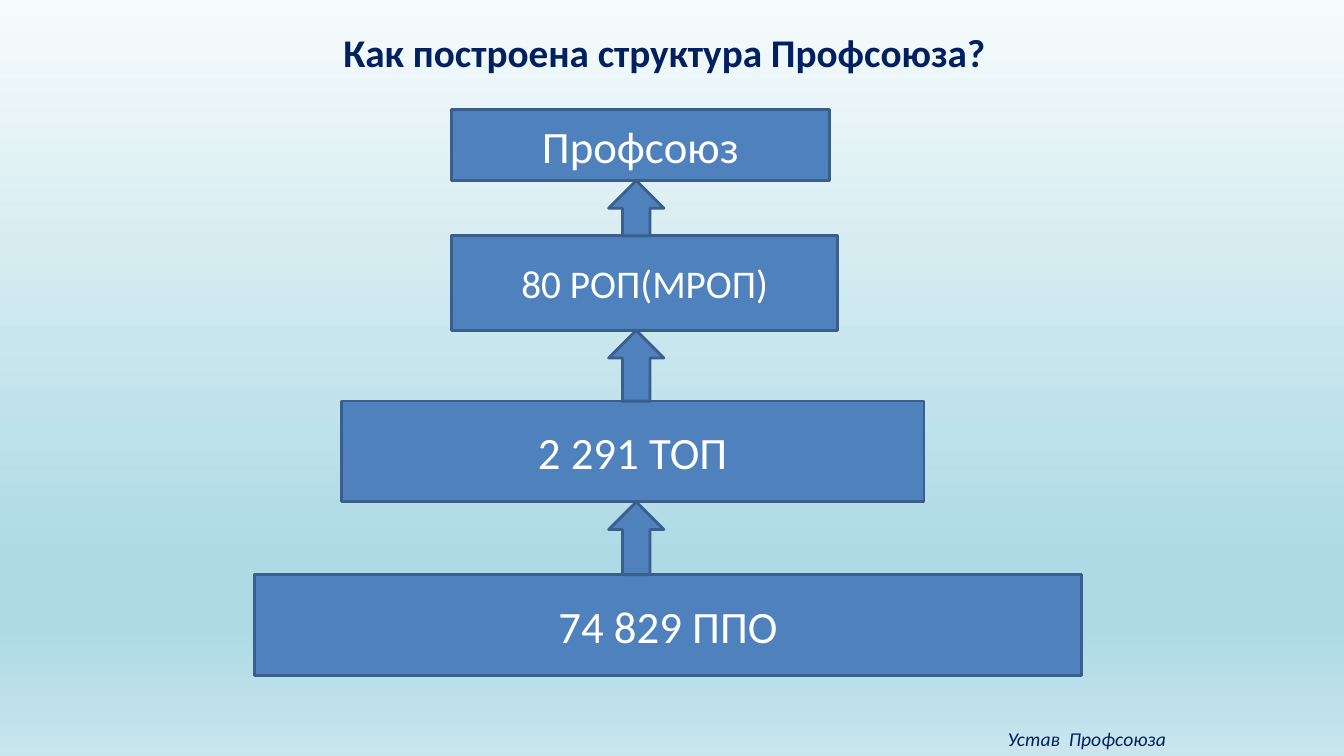
from lxml import etree
from pptx import Presentation
from pptx.dml.color import RGBColor
from pptx.enum.shapes import MSO_SHAPE
from pptx.enum.text import MSO_ANCHOR, PP_ALIGN
from pptx.oxml.ns import qn
from pptx.util import Pt

RECTANGLE, UP_ARROW = MSO_SHAPE.RECTANGLE, MSO_SHAPE.UP_ARROW
TOP, MIDDLE = MSO_ANCHOR.TOP, MSO_ANCHOR.MIDDLE
CENTER, RIGHT = PP_ALIGN.CENTER, PP_ALIGN.RIGHT

COLORS = {"navy": "002060", "blue": "4F81BD", "edge": "3A5F8C", "white": "FFFFFF"}
BACKGROUND_STOPS = [(0, "F6FBFC"), (74, "AEDAE5"), (83, "AEDAE5"), (100, "C9E6EE")]


def write_text(shape, text, size, color, align=CENTER, anchor=MIDDLE):
    """Fill a shape with one formatted line and return its font."""
    frame = shape.text_frame
    frame.text = text
    frame.word_wrap = True
    frame.vertical_anchor = anchor
    para = frame.paragraphs[0]
    para.alignment = align
    font = para.runs[0].font
    font.name, font.size = "Calibri", Pt(size)
    font.color.rgb = RGBColor.from_string(COLORS[color])
    return font


def add_block(kind, left, top, width, height):
    """Add a blue outlined shape."""
    shape = slide.shapes.add_shape(kind, Pt(left), Pt(top), Pt(width), Pt(height))
    shape.shadow.inherit = False
    shape.fill.solid()
    shape.fill.fore_color.rgb = RGBColor.from_string(COLORS["blue"])
    shape.line.color.rgb = RGBColor.from_string(COLORS["edge"])
    shape.line.width = Pt(2)
    return shape


deck = Presentation()
deck.slide_width, deck.slide_height = Pt(960), Pt(540)
slide = deck.slides.add_slide(deck.slide_layouts[5])

# Background gradient, running from top to bottom
background = slide.background.fill
background.gradient()
background.gradient_angle = 270
stop_list = slide.element.find(".//" + qn("a:gsLst"))
for stop in list(stop_list):
    stop_list.remove(stop)
for position, color in BACKGROUND_STOPS:
    stop = etree.SubElement(stop_list, qn("a:gs"), pos=str(position * 1000))
    etree.SubElement(stop, qn("a:srgbClr"), val=color)

# Title and source note
title = slide.shapes.title
title.left, title.top, title.width, title.height = Pt(142.5), Pt(16.5), Pt(664), Pt(41)
write_text(title, "Как построена структура Профсоюза?", 28, "navy", anchor=TOP).bold = True

note = slide.shapes.add_textbox(Pt(542), Pt(515.5), Pt(298), Pt(24.5))
write_text(note, "Устав  Профсоюза", 14, "navy", RIGHT, TOP).italic = True

# Levels from top to bottom: text, size, left, top, width, height
levels = [
    ("Профсоюз", 32, 322.5, 78.5, 270, 50.5),
    ("80 РОП(МРОП)", 28, 322.5, 168.5, 276, 67.5),
    ("2 291 ТОП", 32, 244, 286.5, 416, 72),
    ("74 829 ППО", 32, 182, 410.5, 590.5, 72),
]
for text, size, *place in levels:
    write_text(add_block(RECTANGLE, *place), text, size, "white")

# An arrow fills each gap between neighbouring levels
for upper, lower in zip(levels, levels[1:]):
    upper_bottom = upper[3] + upper[5]
    add_block(UP_ARROW, 434.75, upper_bottom, 39.5, lower[3] - upper_bottom)

deck.save("out.pptx")
